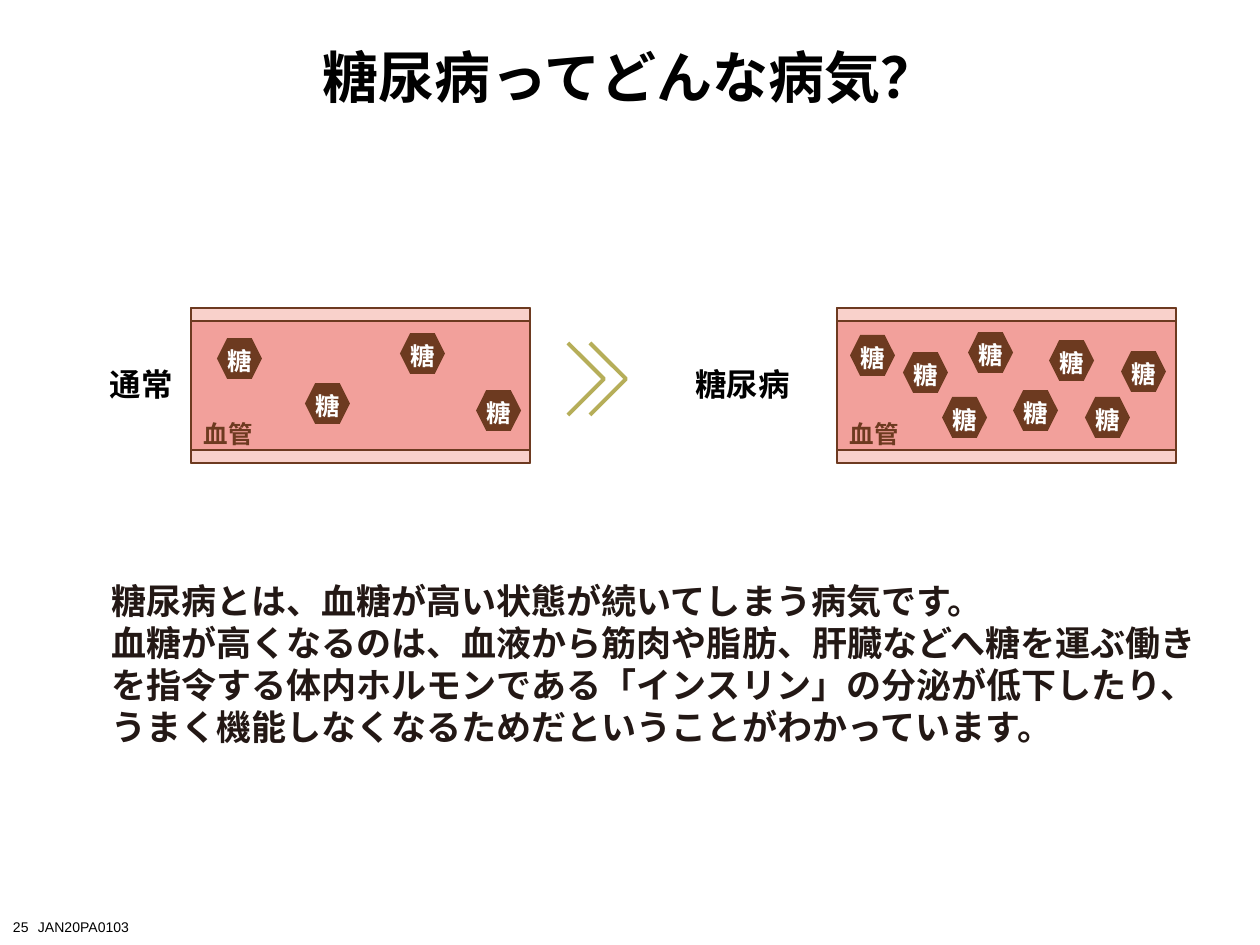
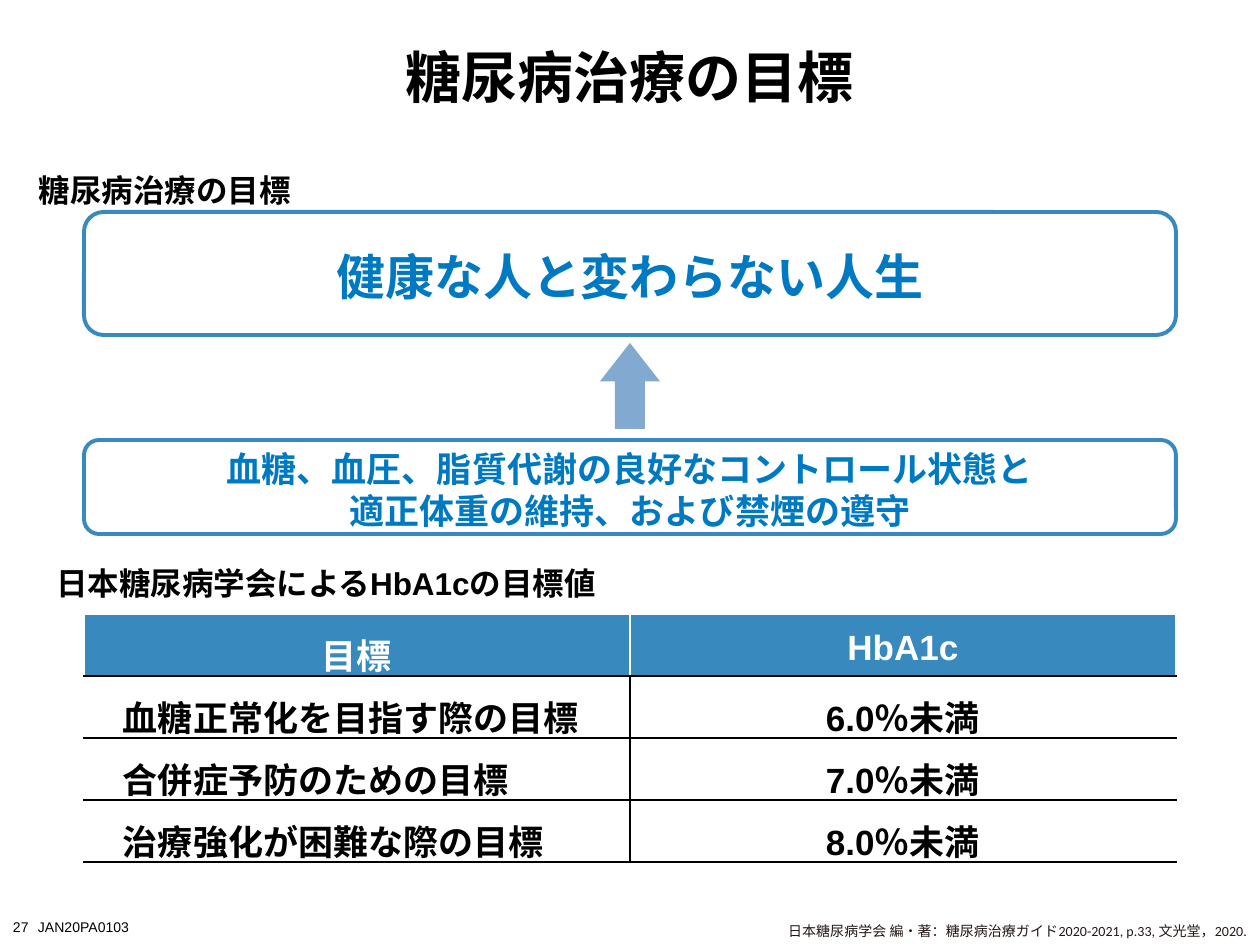
import pptx
import pptx.dml.color
import pptx.enum.shapes
import pptx.enum.text
import pptx.oxml
import pptx.oxml.ns
import pptx.util

RGBColor = pptx.dml.color.RGBColor
SHAPE = pptx.enum.shapes.MSO_SHAPE
ALIGN = pptx.enum.text.PP_ALIGN
ANCHOR = pptx.enum.text.MSO_ANCHOR
AUTO_SIZE = pptx.enum.text.MSO_AUTO_SIZE

PX_PER_INCH = 126

BLACK = RGBColor(0x00, 0x00, 0x00)
WHITE = RGBColor(0xFF, 0xFF, 0xFF)
INK = RGBColor(0x23, 0x18, 0x15)
BROWN = RGBColor(0x6D, 0x3A, 0x20)
BLOOD = RGBColor(0xF2, 0xA0, 0x9B)
WALL = RGBColor(0xF9, 0xD1, 0xCB)
OLIVE = RGBColor(0xB6, 0xAE, 0x59)
BLUE = RGBColor(0x37, 0x89, 0xBE)
BLUE_TEXT = RGBColor(0x00, 0x79, 0xC3)
ARROW_BLUE = RGBColor(0x82, 0xAA, 0xD1)

# Text styles: font attributes plus the colour
TITLE = dict(name="Arial", size=32, bold=True), BLACK
HEADING = dict(name="Arial", size=18, bold=True), BLACK
BODY = dict(name="Calibri", size=20, bold=True), INK
FOOTER = dict(name="Arial", size=8, bold=False), BLACK
SOURCE = dict(name="Calibri", size=8, bold=False), INK
SUGAR = dict(name="Arial", size=14, bold=True), WHITE
VESSEL = dict(name="Arial", size=14, bold=True), BROWN
GOAL = dict(name="Arial", size=28, bold=True), BLUE_TEXT
MEANS = dict(name="Arial", size=20, bold=True), BLUE_TEXT
HEADER_CELL = dict(name="Arial", size=20, bold=True), WHITE
BODY_CELL = dict(name="Arial", size=20, bold=True), BLACK

# Insets in px: left, top, right, bottom
DEFAULT_INSETS = (13, 6, 13, 6)
TITLE_INSETS = (13, 18, 13, 5)
VESSEL_INSETS = (13, 6, 13, 15)
SUGAR_INSETS = (0, 5, 0, 0)
BOX_INSETS = (35, 10, 35, 5)
CELL_INSETS = (13, 15, 13, 5)
INDENTED_CELL_INSETS = (39, 15, 13, 5)

DOCUMENT_CODE = "JAN20PA0103"

DISEASE_TITLE = "糖尿病ってどんな病気？"
DISEASE_TEXT = [
    "糖尿病とは、血糖が高い状態が続いてしまう病気です。",
    "血糖が高くなるのは、血液から筋肉や脂肪、肝臓などへ糖を運ぶ働きを指令する体内ホルモンである"
    "「インスリン」の分泌が低下したり、うまく機能しなくなるためだということがわかっています。",
]
VESSEL_TOP, VESSEL_WIDTH, VESSEL_HEIGHT, WALL_HEIGHT = 308, 339, 155, 13
SUGAR_WIDTH, SUGAR_HEIGHT = 45, 41
# Sugar positions are left and top within the vessel
VESSELS = [
    dict(label="通常", label_left=84, label_width=102, left=191,
         sugars=[(26, 30), (114, 75), (209, 25), (285, 82)]),
    dict(label="糖尿病", label_left=664, label_width=139, left=837,
         sugars=[(13, 27), (66, 44), (131, 24), (212, 32),
                 (284, 43), (105, 89), (176, 82), (248, 89)]),
]
CHEVRON_LEFTS = (568, 590)
CHEVRON_TOP, CHEVRON_WIDTH, CHEVRON_HEIGHT = 343, 36, 72

TREATMENT_TITLE = "糖尿病治療の目標"
HEADINGS = [
    ("日本糖尿病学会によるHbA1cの目標値", (43, 558, 1091, 51)),
    ("糖尿病治療の目標", (26, 165, 905, 51)),
]
GOAL_BOXES = [
    (["健康な人と変わらない人生"], GOAL, (84, 212, 1092, 123)),
    (["血糖、血圧、脂質代謝の良好なコントロール状態と",
      "適正体重の維持、および禁煙の遵守"], MEANS, (84, 440, 1092, 94)),
]
TARGETS = [
    ("目標", "HbA1c"),
    ("血糖正常化を目指す際の目標", "6.0％未満"),
    ("合併症予防のための目標", "7.0％未満"),
    ("治療強化が困難な際の目標", "8.0％未満"),
]
TABLE_LEFT, TABLE_TOP, COLUMN_WIDTH, ROW_HEIGHT = 84, 614, 546, 62
CITATION = "日本糖尿病学会 編・著：糖尿病治療ガイド2020-2021, p.33, 文光堂，2020."


def px(length):
    return pptx.util.Emu(round(length * 914400 / PX_PER_INCH))


def write(frame, lines, style, align=ALIGN.LEFT):
    values, colour = style
    for index, line in enumerate(lines):
        paragraph = frame.add_paragraph() if index else frame.paragraphs[0]
        paragraph.text = line
        paragraph.alignment = align
        for name, value in values.items():
            setattr(paragraph.font, name, pptx.util.Pt(value) if name == "size" else value)
        paragraph.font.color.rgb = colour


def set_insets(target, insets):
    for side, inset in zip(("left", "top", "right", "bottom"), insets):
        setattr(target, f"margin_{side}", px(inset))


def set_frame(frame, insets, anchor, wrap=True, auto_size=AUTO_SIZE.NONE):
    set_insets(frame, insets)
    formats = dict(vertical_anchor=anchor, word_wrap=wrap, auto_size=auto_size)
    for name, value in formats.items():
        setattr(frame, name, value)


def add_text(slide, box, lines, style, align=ALIGN.LEFT, anchor=ANCHOR.TOP, wrap=True):
    shape = slide.shapes.add_textbox(*map(px, box))
    set_frame(shape.text_frame, DEFAULT_INSETS, anchor, wrap, AUTO_SIZE.SHAPE_TO_FIT_TEXT)
    write(shape.text_frame, lines, style, align)


def add_shape(slide, kind, box, fill, line=None, line_width=1, adjustments=()):
    shape = slide.shapes.add_shape(kind, *map(px, box))
    shape.shadow.inherit = False
    shape.fill.solid()
    shape.fill.fore_color.rgb = fill
    if line is None:
        shape.line.fill.background()
    else:
        shape.line.color.rgb = line
        shape.line.width = pptx.util.Pt(line_width)
    for index, value in enumerate(adjustments):
        shape.adjustments[index] = value
    return shape


def add_slide(presentation, title, number):
    """Add a slide with the shared title style and footer."""
    slide = presentation.slides.add_slide(presentation.slide_layouts[5])
    shape = slide.shapes.title
    for name, value in zip(("left", "top", "width", "height"), (122, 2, 1016, 135)):
        setattr(shape, name, px(value))
    set_frame(shape.text_frame, TITLE_INSETS, ANCHOR.MIDDLE)
    write(shape.text_frame, [title], TITLE, ALIGN.CENTER)
    add_text(slide, (25, 912, 118, 30), [DOCUMENT_CODE], FOOTER, wrap=False)
    add_text(slide, (0, 912, 43, 30), [str(number)], FOOTER, wrap=False)
    return slide


def add_vessel(slide, vessel):
    left = vessel["left"]
    blood = add_shape(slide, SHAPE.RECTANGLE,
                      (left, VESSEL_TOP, VESSEL_WIDTH, VESSEL_HEIGHT), BLOOD, BROWN)
    set_frame(blood.text_frame, VESSEL_INSETS, ANCHOR.BOTTOM)
    write(blood.text_frame, ["血管"], VESSEL)
    for top in (VESSEL_TOP, VESSEL_TOP + VESSEL_HEIGHT - WALL_HEIGHT):
        add_shape(slide, SHAPE.RECTANGLE, (left, top, VESSEL_WIDTH, WALL_HEIGHT), WALL, BROWN)
    for x, y in vessel["sugars"]:
        sugar = add_shape(slide, SHAPE.HEXAGON,
                          (left + x, VESSEL_TOP + y, SUGAR_WIDTH, SUGAR_HEIGHT), BROWN)
        set_frame(sugar.text_frame, SUGAR_INSETS, ANCHOR.MIDDLE)
        write(sugar.text_frame, ["糖"], SUGAR, ALIGN.CENTER)
    add_text(slide, (vessel["label_left"], 355, vessel["label_width"], 58),
             [vessel["label"]], HEADING, ALIGN.RIGHT, ANCHOR.MIDDLE, wrap=False)


def add_chevron(slide, left):
    builder = slide.shapes.build_freeform(px(left), px(CHEVRON_TOP))
    builder.add_line_segments([
        (px(left + CHEVRON_WIDTH), px(CHEVRON_TOP + CHEVRON_HEIGHT / 2)),
        (px(left), px(CHEVRON_TOP + CHEVRON_HEIGHT)),
    ], close=False)
    shape = builder.convert_to_shape()
    shape.shadow.inherit = False
    shape.fill.background()
    shape.line.color.rgb = OLIVE
    shape.line.width = pptx.util.Pt(2.25)


def add_border(cell, side, colour):
    cell._tc.get_or_add_tcPr().append(pptx.oxml.parse_xml(
        f'<a:ln{side} {pptx.oxml.ns.nsdecls("a")} w="12700"><a:solidFill>'
        f'<a:srgbClr val="{colour}"/></a:solidFill></a:ln{side}>'))


def add_targets_table(slide):
    rows, columns = len(TARGETS), len(TARGETS[0])
    box = (TABLE_LEFT, TABLE_TOP, columns * COLUMN_WIDTH, rows * ROW_HEIGHT)
    table = slide.shapes.add_table(rows, columns, *map(px, box)).table
    for row, texts in enumerate(TARGETS):
        header = row == 0
        for column, text in enumerate(texts):
            cell = table.cell(row, column)
            indented = not header and column == 0
            set_insets(cell, INDENTED_CELL_INSETS if indented else CELL_INSETS)
            write(cell.text_frame, [text], HEADER_CELL if header else BODY_CELL,
                  ALIGN.LEFT if indented else ALIGN.CENTER)
            add_border(cell, "L" if column else "R", WHITE if header else BLACK)
            if not header:
                add_border(cell, "T", BLACK)
            add_border(cell, "B", BLACK)
            cell.fill.solid()
            cell.fill.fore_color.rgb = BLUE if header else WHITE


def build_disease_slide(presentation):
    slide = add_slide(presentation, DISEASE_TITLE, 25)
    add_text(slide, (98, 573, 1128, 183), DISEASE_TEXT, BODY)
    for left in CHEVRON_LEFTS:
        add_chevron(slide, left)
    for vessel in VESSELS:
        add_vessel(slide, vessel)


def build_treatment_slide(presentation):
    slide = add_slide(presentation, TREATMENT_TITLE, 27)
    add_text(slide, (775, 915, 485, 30), [CITATION], SOURCE,
             ALIGN.RIGHT, ANCHOR.BOTTOM, wrap=False)
    for lines, style, box in GOAL_BOXES:
        shape = add_shape(slide, SHAPE.ROUNDED_RECTANGLE, box, WHITE, BLUE, 2.25, [0.16])
        set_frame(shape.text_frame, BOX_INSETS, ANCHOR.MIDDLE)
        write(shape.text_frame, lines, style, ALIGN.CENTER)
    add_shape(slide, SHAPE.UP_ARROW, (600, 343, 60, 86), ARROW_BLUE, adjustments=[0.5, 0.64])
    add_targets_table(slide)
    for text, box in HEADINGS:
        add_text(slide, box, [text], HEADING)


def main():
    presentation = pptx.Presentation()
    presentation.slide_width = px(1260)
    presentation.slide_height = px(945)
    build_disease_slide(presentation)
    build_treatment_slide(presentation)
    presentation.save("out.pptx")


if __name__ == "__main__":
    main()
